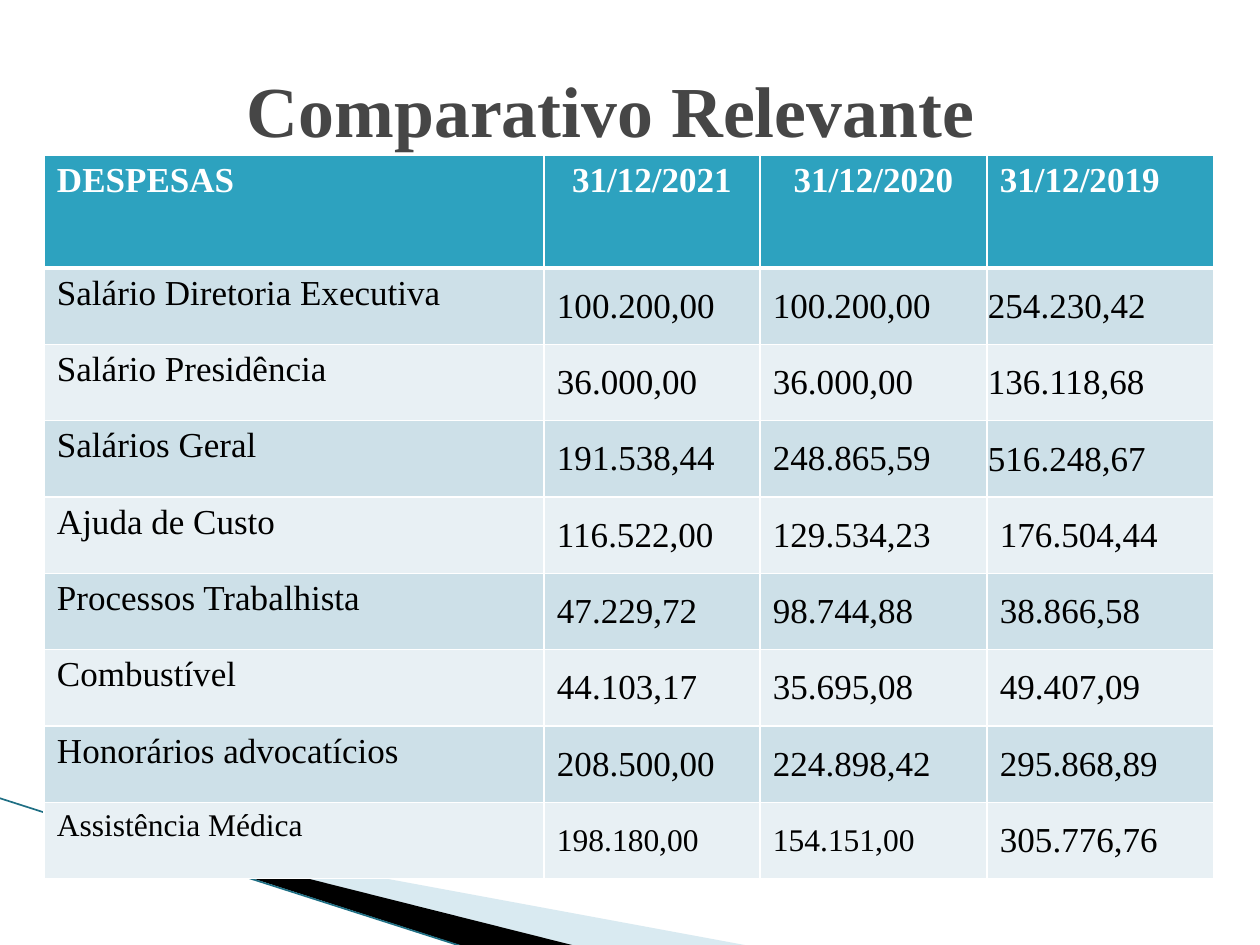
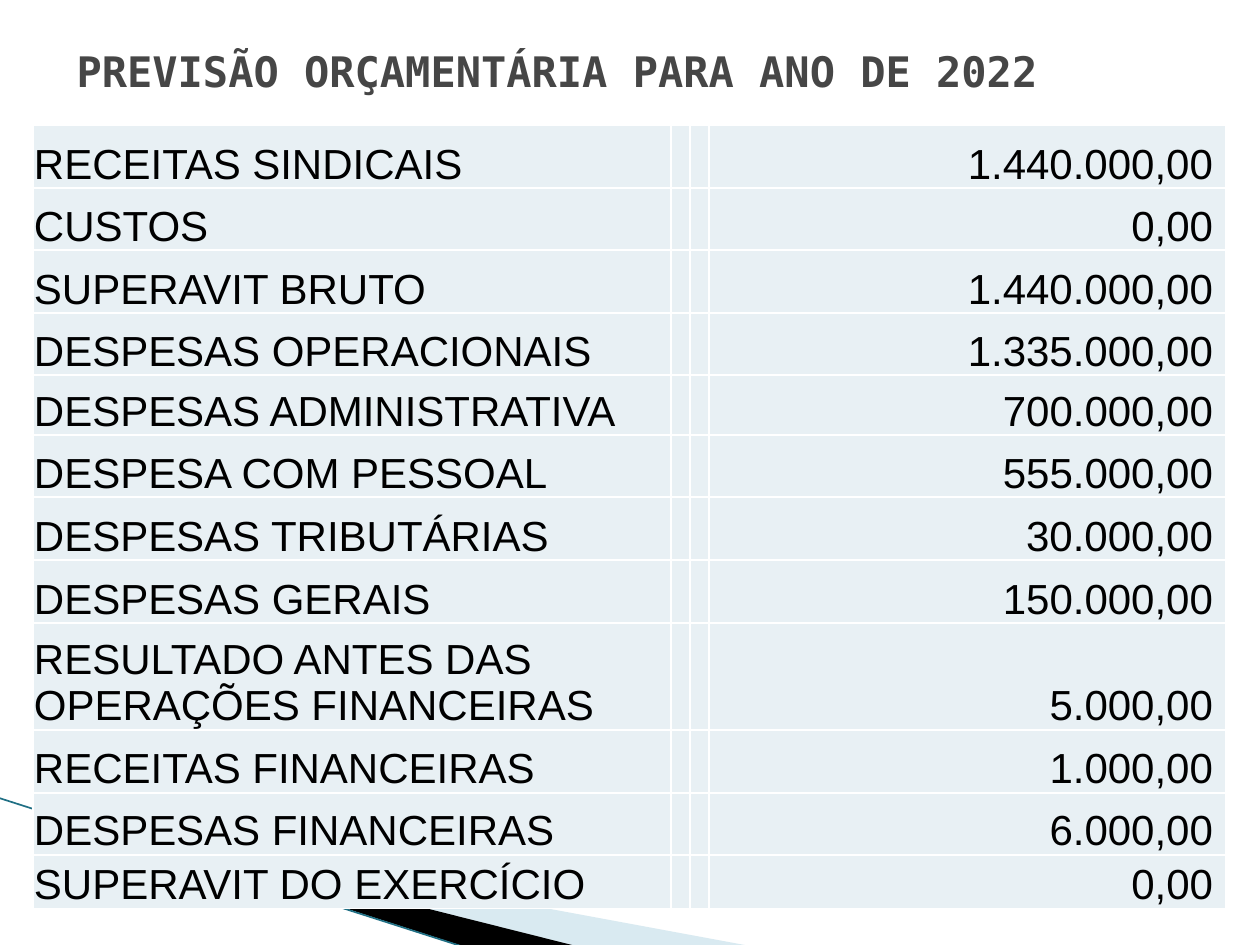
from lxml.etree import SubElement
from pptx import Presentation
from pptx.dml.color import RGBColor
from pptx.enum.text import MSO_ANCHOR, MSO_AUTO_SIZE, PP_ALIGN
from pptx.enum.shapes import MSO_CONNECTOR
from pptx.oxml.ns import qn
from pptx.util import Pt

EMU_PER_PX = 914400 / 126
PAGE_WIDTH, PAGE_HEIGHT = 1260, 945
TITLE_ONLY_LAYOUT = 5

WHITE = "FFFFFF"
BLACK = "000000"
TITLE_GREY = "464646"
HEADER_TEAL = "2DA2BF"
BAND_DARK = "CDE0E8"
BAND_LIGHT = "E8F0F4"
SWOOSH_BLUE = "A0CBDC"
SWOOSH_LINE = "1F6F84"

SERIF = "Times New Roman"
SANS = "Arial"
MONO = "DejaVu Sans Mono"

DEFAULT_INSETS = (13, 6, 13, 6)
TIGHT_INSETS = (1, 1, 1, 0)
AMOUNT_INSETS = (1, 1, 13, 0)

EXPENSE_HEADER = ("DESPESAS", "31/12/2021", "31/12/2020", "31/12/2019")
EXPENSES = [
    ("Salário Diretoria Executiva", "100.200,00", "100.200,00", "254.230,42"),
    ("Salário Presidência", "36.000,00", "36.000,00", "136.118,68"),
    ("Salários Geral", "191.538,44", "248.865,59", "516.248,67"),
    ("Ajuda de Custo", "116.522,00", "129.534,23", "176.504,44"),
    ("Processos Trabalhista", "47.229,72", "98.744,88", "38.866,58"),
    ("Combustível", "44.103,17", "35.695,08", "49.407,09"),
    ("Honorários advocatícios", "208.500,00", "224.898,42", "295.868,89"),
    ("Assistência Médica", "198.180,00", "154.151,00", "305.776,76"),
]
TIGHT_EXPENSE_ROWS = 3

BUDGET = [
    ("RECEITAS SINDICAIS", "1.440.000,00", 63),
    ("CUSTOS", "0,00", 62),
    ("SUPERAVIT BRUTO", "1.440.000,00", 63),
    ("DESPESAS OPERACIONAIS", "1.335.000,00", 62),
    ("DESPESAS ADMINISTRATIVA", "700.000,00", 60),
    ("DESPESA COM PESSOAL", "555.000,00", 62),
    ("DESPESAS TRIBUTÁRIAS", "30.000,00", 63),
    ("DESPESAS GERAIS", "150.000,00", 63),
    ("RESULTADO ANTES DAS OPERAÇÕES FINANCEIRAS", "5.000,00", 107),
    ("RECEITAS FINANCEIRAS", "1.000,00", 63),
    ("DESPESAS FINANCEIRAS", "6.000,00", 62),
    ("SUPERAVIT DO EXERCÍCIO", "0,00", 54),
]


def px(length):
    return round(length * EMU_PER_PX)


def color(hex_value):
    return RGBColor.from_string(hex_value)


def format_text(text_frame, font_name, size, hex_value, bold, align):
    for para in text_frame.paragraphs:
        para.alignment = align
        for span in para.runs:
            span.font.name = font_name
            span.font.size = Pt(size)
            span.font.bold = bold
            span.font.color.rgb = color(hex_value)


def add_wedge(page, box, points, hex_value, opacity=None):
    left, top = box[:2]
    corners = [(px(left + x), px(top + y)) for x, y in points]
    builder = page.shapes.build_freeform(*corners[0])
    builder.add_line_segments(corners[1:], close=True)
    wedge = builder.convert_to_shape()
    wedge.shadow.inherit = False
    wedge.line.fill.background()
    wedge.fill.solid()
    wedge.fill.fore_color.rgb = color(hex_value)
    if opacity:
        tint = wedge.fill._xPr.find(".//" + qn("a:srgbClr"))
        SubElement(tint, qn("a:alpha"), val=str(opacity * 1000))


def add_swoosh(page, box):
    left, top, width, height = box
    add_wedge(page, box, [(70, 22), (751, 148), (576, 148), (70, 21)], SWOOSH_BLUE, 40)
    add_wedge(page, box, [(68, 20), (577, 148), (470, 150), (69, 21)], BLACK)
    edge = page.shapes.add_connector(
        MSO_CONNECTOR.STRAIGHT, px(left), px(top), px(left + width), px(top + height))
    edge.line.color.rgb = color(SWOOSH_LINE)
    edge.line.width = Pt(0.95)
    SubElement(edge._element.spPr, qn("a:effectLst"))


def add_page(deck):
    page = deck.slides.add_slide(deck.slide_layouts[TITLE_ONLY_LAYOUT])
    add_swoosh(page, (-1, 798, 468, 150))
    return page


def set_title(page, box, text, font_name, size, align):
    title = page.shapes.title
    title.left, title.top, title.width, title.height = map(px, box)
    title.text_frame.text = text
    title.text_frame.auto_size = MSO_AUTO_SIZE.NONE
    title.text_frame.vertical_anchor = MSO_ANCHOR.MIDDLE
    format_text(title.text_frame, font_name, size, TITLE_GREY, True, align)


def add_grid(page, left, top, widths, heights):
    frame = page.shapes.add_table(
        len(heights), len(widths), px(left), px(top), px(sum(widths)), px(sum(heights)))
    table = frame.table
    for column, width in zip(table.columns, widths):
        column.width = px(width)
    for row, height in zip(table.rows, heights):
        row.height = px(height)
    return table


def style_cell(cell, fill, insets=DEFAULT_INSETS, anchor=MSO_ANCHOR.TOP, top_line=1, bottom_line=1):
    cell.margin_left, cell.margin_top, cell.margin_right, cell.margin_bottom = map(px, insets)
    cell.vertical_anchor = anchor
    properties = cell._tc.get_or_add_tcPr()
    for side, points in (("L", 1), ("R", 1), ("T", top_line), ("B", bottom_line)):
        border = SubElement(properties, qn(f"a:ln{side}"), w=str(Pt(points)))
        SubElement(SubElement(border, qn("a:solidFill")), qn("a:srgbClr"), val=WHITE)
    cell.fill.solid()
    cell.fill.fore_color.rgb = color(fill)


def add_expense_table(page, box):
    left, top, width, height = box
    header_height = 113
    row_height = (height - header_height) / len(EXPENSES)
    date_widths = [216, 227, 227]
    table = add_grid(page, left, top, [width - sum(date_widths)] + date_widths,
                     [header_height] + [row_height] * len(EXPENSES))
    for index, text in enumerate(EXPENSE_HEADER):
        cell = table.cell(0, index)
        cell.text_frame.text = text
        style_cell(cell, HEADER_TEAL, bottom_line=3)
        align = PP_ALIGN.CENTER if index in (1, 2) else PP_ALIGN.LEFT
        format_text(cell.text_frame, SERIF, 20, WHITE, True, align)
    for row, values in enumerate(EXPENSES, 1):
        fill = BAND_DARK if row % 2 else BAND_LIGHT
        for index, text in enumerate(values):
            cell = table.cell(row, index)
            cell.text_frame.text = text
            tight = index == 3 and row <= TIGHT_EXPENSE_ROWS
            style_cell(cell, fill, TIGHT_INSETS if tight else DEFAULT_INSETS,
                       MSO_ANCHOR.MIDDLE if index else MSO_ANCHOR.TOP,
                       top_line=3 if row == 1 else 1)
            size = 18 if row == len(EXPENSES) and index < 3 else 20
            format_text(cell.text_frame, SERIF, size, BLACK, False, PP_ALIGN.LEFT)


def add_budget_table(page, box):
    left, top, width = box[:3]
    label_width, spacer_width = 638, 19
    widths = [label_width, spacer_width, spacer_width, width - label_width - 2 * spacer_width]
    table = add_grid(page, left, top, widths, [height for _, _, height in BUDGET])
    table.first_row = False
    for row, (label, amount, _) in enumerate(BUDGET):
        for index, text in enumerate((label, "", "", amount)):
            cell = table.cell(row, index)
            cell.text_frame.text = text
            style_cell(cell, BAND_LIGHT, AMOUNT_INSETS if index == 3 else TIGHT_INSETS,
                       MSO_ANCHOR.BOTTOM)
            align = PP_ALIGN.RIGHT if index == 3 else PP_ALIGN.LEFT
            format_text(cell.text_frame, SANS, 24, BLACK, False, align)


def add_comparison_page(deck):
    page = add_page(deck)
    set_title(page, (44, 30, 1134, 158), "Comparativo Relevante", SERIF, 41, PP_ALIGN.CENTER)
    add_expense_table(page, (44, 155, 1170, 724))


def add_budget_page(deck):
    page = add_page(deck)
    set_title(page, (64, 16, 1134, 110), "PREVISÃO ORÇAMENTÁRIA PARA ANO DE 2022",
              MONO, 24, PP_ALIGN.LEFT)
    add_budget_table(page, (33, 125, 1193, 784))


def main():
    deck = Presentation()
    deck.slide_width, deck.slide_height = px(PAGE_WIDTH), px(PAGE_HEIGHT)
    add_comparison_page(deck)
    add_budget_page(deck)
    deck.save("out.pptx")


if __name__ == "__main__":
    main()
